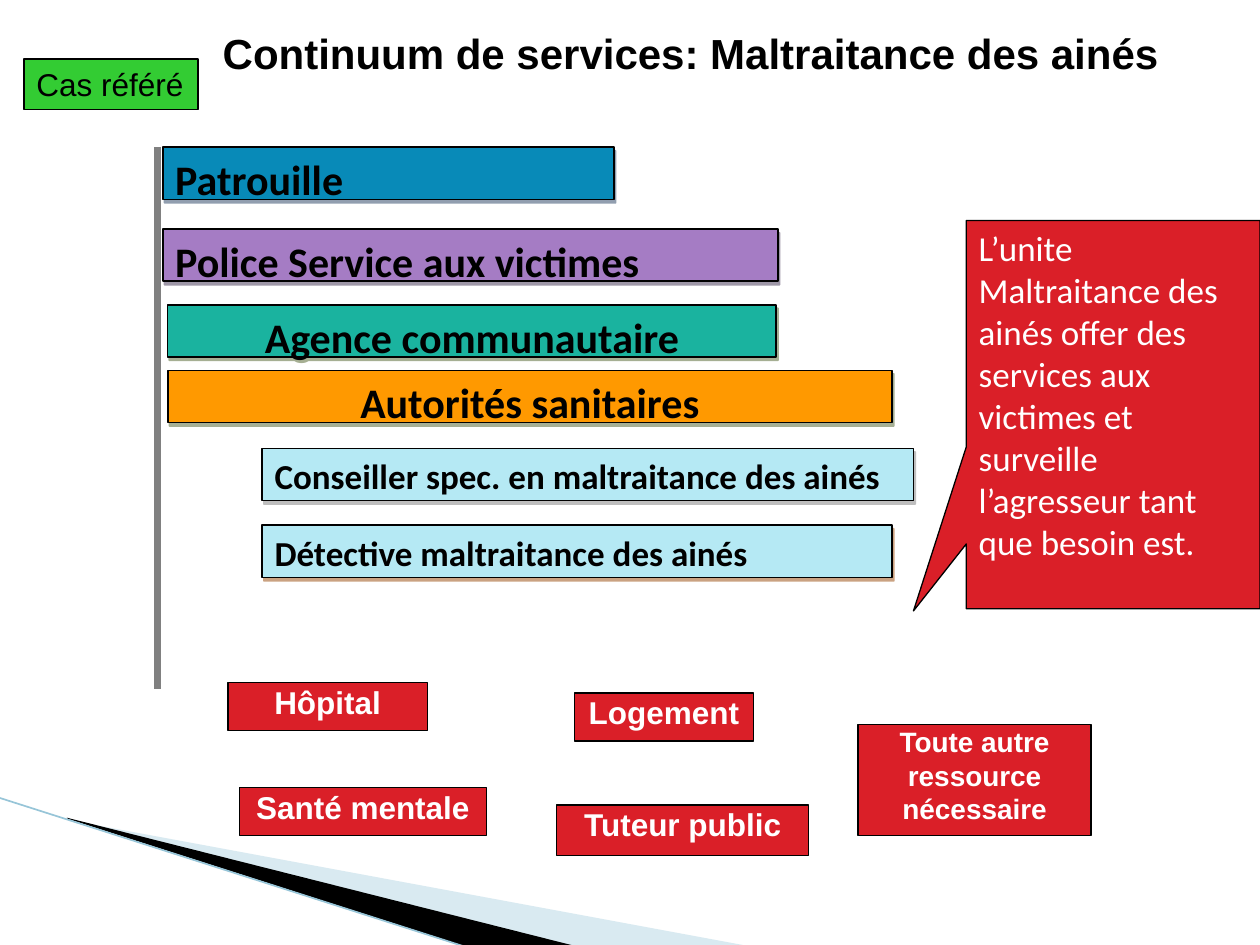
"""Build the slide on the continuum of services for mistreated elders."""
from dataclasses import dataclass
from typing import Any, Optional

import lxml.etree
import pptx
import pptx.dml.color
import pptx.enum.shapes
import pptx.enum.text
import pptx.oxml.ns
import pptx.util

Pt = pptx.util.Pt
KINDS = pptx.enum.shapes.MSO_SHAPE
ALIGN = pptx.enum.text.PP_ALIGN


@dataclass(frozen=True)
class Theme:
    """Colours, fonts and sizes of the slide."""
    black: str = "000000"
    white: str = "FFFFFF"
    red: str = "DA1F28"
    green: str = "33CC33"
    blue: str = "088AB8"
    purple: str = "A57CC4"
    teal: str = "1AB39F"
    orange: str = "FF9900"
    sky: str = "B5E9F4"
    grey: str = "808080"
    wave: str = "A0CBDC"
    edge: str = "97C5D8"
    olive: str = "4E6128"
    sans: str = "Arial"
    body: str = "Calibri"
    large: float = 24
    medium: float = 20
    small: float = 18
    tiny: float = 16


THEME = Theme()


@dataclass(frozen=True)
class Bar:
    """A service bar with a cast shadow."""
    text: str
    left: float
    top: float
    width: float
    fill: str
    shade: str
    size: float = THEME.large
    align: Any = ALIGN.LEFT
    height: float = 29.8


@dataclass(frozen=True)
class Tag:
    """A red box that names a resource."""
    text: str
    left: float
    top: float
    width: float
    height: float = 27.4
    size: float = THEME.small


BARS = [
    Bar("Patrouille", 93, 84.2, 257.8, THEME.blue, "243F60"),
    Bar("Police Service aux victimes", 93, 131, 351.4, THEME.purple, "3F3151"),
    Bar("Agence communautaire", 95.8, 174.2, 347.8, THEME.teal, THEME.olive, align=ALIGN.CENTER),
    Bar("Autorités sanitaires", 95.8, 211.7, 414, THEME.orange, THEME.olive, align=ALIGN.CENTER),
    Bar("Conseiller spec. en maltraitance des ainés", 149.8, 256.3, 372.2,
        THEME.sky, "7F7F7F", THEME.medium),
    Bar("Détective maltraitance des ainés", 149.8, 300.2, 360, THEME.sky, "974706", THEME.medium),
]
TAGS = [
    Tag("Hôpital", 130.3, 390.2, 113.8),
    Tag("Logement", 328.3, 396, 102.2),
    Tag("Santé mentale", 136.8, 450, 141.1),
    Tag("Tuteur public", 318.2, 460.1, 144, 28.8),
    Tag("Toute autre ressource nécessaire", 490.3, 414, 133.2, 63.4, THEME.tiny),
]


def paint(fill: Any, tint: str) -> None:
    """Give a fill one solid colour."""
    fill.solid()
    fill.fore_color.rgb = pptx.dml.color.RGBColor.from_string(tint)


def add_node(parent: Any, tag: str, **attrs: Any) -> Any:
    """Append a drawing element with its attributes."""
    node = lxml.etree.SubElement(parent, pptx.oxml.ns.qn(tag))
    for key, value in attrs.items():
        node.set(key, str(value))
    return node


def write(shape: Any, text: str, *, size: float, font: str = THEME.body,
          tint: str = THEME.black, bold: bool = False, align: Any = ALIGN.LEFT,
          wrap: bool = True, inset: Optional[float] = None) -> None:
    """Put formatted text in a shape."""
    frame = shape.text_frame
    frame.word_wrap = wrap
    frame.vertical_anchor = pptx.enum.text.MSO_ANCHOR.TOP
    if not wrap:
        frame.auto_size = pptx.enum.text.MSO_AUTO_SIZE.SHAPE_TO_FIT_TEXT
    if inset is not None:
        frame.margin_left = frame.margin_right = Pt(inset)
        frame.margin_top = frame.margin_bottom = Pt(inset)
    para = frame.paragraphs[0]
    para.alignment = align
    run = para.add_run()
    run.text = text
    run.font.name, run.font.size, run.font.bold = font, Pt(size), bold
    run.font.color.rgb = pptx.dml.color.RGBColor.from_string(tint)


def add_box(slide: Any, left: float, top: float, width: float, height: float,
            fill: str, line: float = 0.75, kind: Any = KINDS.RECTANGLE) -> Any:
    """Draw a filled shape with a black outline."""
    box = slide.shapes.add_shape(kind, Pt(left), Pt(top), Pt(width), Pt(height))
    box.shadow.inherit = False
    paint(box.fill, fill)
    paint(box.line.fill, THEME.black)
    box.line.width = Pt(line)
    return box


def add_bar(slide: Any, bar: Bar) -> None:
    """Draw a service bar."""
    box = add_box(slide, bar.left, bar.top, bar.width, bar.height, bar.fill, 1)
    cast = add_node(box.element.spPr.find(pptx.oxml.ns.qn("a:effectLst")), "a:outerShdw",
                    dist=Pt(2.2), dir=63 * 60000, algn="ctr", rotWithShape=0)
    add_node(add_node(cast, "a:srgbClr", val=bar.shade), "a:alpha", val=50000)
    write(box, bar.text, size=bar.size, bold=True, align=bar.align)


def add_tag(slide: Any, tag: Tag) -> None:
    """Draw a resource box."""
    box = add_box(slide, tag.left, tag.top, tag.width, tag.height, THEME.red)
    write(box, tag.text, size=tag.size, font=THEME.sans, tint=THEME.white,
          bold=True, align=ALIGN.CENTER, inset=0)


def add_line(slide: Any, start: tuple, end: tuple, tint: str, width: float) -> None:
    """Draw a straight line."""
    line = slide.shapes.add_connector(pptx.enum.shapes.MSO_CONNECTOR.STRAIGHT,
                                      *map(Pt, start), *map(Pt, end))
    paint(line.line.fill, tint)
    line.line.width = Pt(width)
    add_node(line.element.spPr, "a:effectLst")


def add_wedge(slide: Any, points: list, tint: str, alpha: int = 100) -> None:
    """Draw a closed outline without a border."""
    first, *rest = [(Pt(x), Pt(y)) for x, y in points]
    form = slide.shapes.build_freeform(*first)
    form.add_line_segments(rest, close=True)
    wedge = form.convert_to_shape()
    wedge.shadow.inherit = False
    paint(wedge.fill, tint)
    wedge.line.fill.background()
    if alpha < 100:
        shade = wedge.element.spPr.find(".//" + pptx.oxml.ns.qn("a:srgbClr"))
        add_node(shade, "a:alpha", val=alpha * 1000)


def main() -> None:
    """Build and save the slide."""
    deck = pptx.Presentation()
    deck.slide_width, deck.slide_height = Pt(720), Pt(540)
    slide = deck.slides.add_slide(deck.slide_layouts[6])

    add_wedge(slide, [(39.6, 468.7), (428.4, 540.7), (328.3, 540.7), (39.6, 468)], THEME.wave, 40)
    add_wedge(slide, [(38.2, 467.3), (329, 540.7), (267.8, 541.4), (38.9, 468)], THEME.black)
    add_line(slide, (-0.7, 455.8), (267.1, 541.4), THEME.edge, 0.95)

    for bar in BARS:
        add_bar(slide, bar)
    add_line(slide, (90, 84.2), (90, 393.8), THEME.grey, 4.5)

    call = add_box(slide, 552.2, 126, 167.8, 221.8, THEME.red, kind=KINDS.RECTANGULAR_CALLOUT)
    call.adjustments[0], call.adjustments[1] = -0.68, 0.506
    write(call, "L’unite Maltraitance des ainés offer des services aux victimes et "
          "surveille l’agresseur tant que besoin est.", size=THEME.medium, tint=THEME.white)

    for tag in TAGS:
        add_tag(slide, tag)

    case = add_box(slide, 13.7, 33.8, 99.4, 28.8, THEME.green)
    write(case, "Cas référé", size=THEME.small, font=THEME.sans, wrap=False)
    title = slide.shapes.add_textbox(Pt(120.2), Pt(12.2), Pt(554.4), Pt(36))
    write(title, "Continuum de services: Maltraitance des ainés", size=THEME.large,
          font=THEME.sans, bold=True, wrap=False)
    deck.save("out.pptx")


if __name__ == "__main__":
    main()
